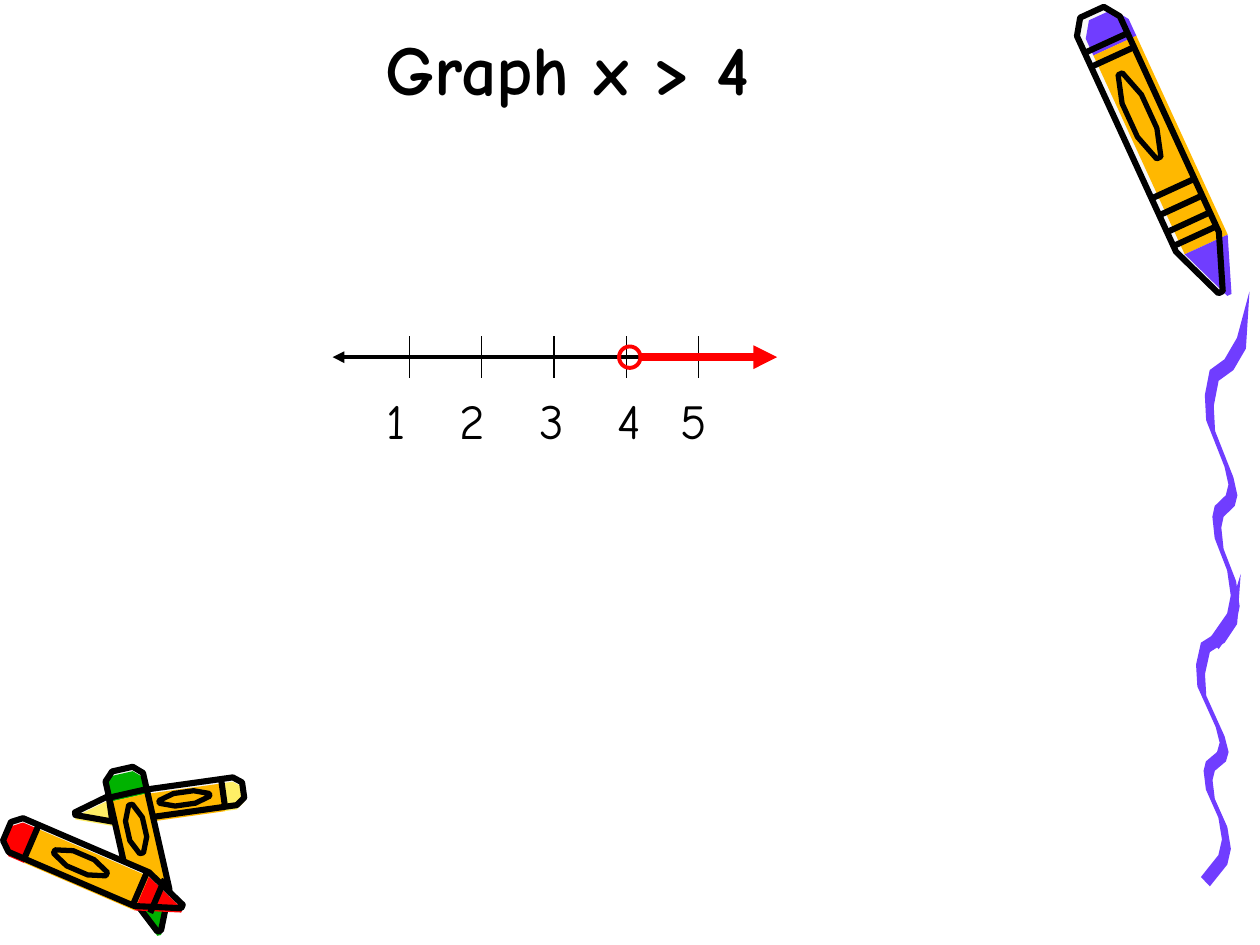
import math

import pptx
import pptx.dml.color
import pptx.enum.shapes
import pptx.enum.text
import pptx.oxml
import pptx.oxml.ns
import pptx.util

Pt = pptx.util.Pt
FONT = "Comic Neue"
BLACK, RED, GREEN = "000000", "FF0000", "00B200"
AMBER, LEMON, VIOLET, PALE = "FFB800", "FFEF66", "703DFF", "F8F8F8"

# Left edge of one wave of the squiggle, as shares of its box's width and height.
WAVE = [(1, 0), (0.72, 0.13), (0.44, 0.19), (0.11, 0.22), (0, 0.29), (0.03, 0.36),
        (0.44, 0.49), (0.53, 0.54), (0.47, 0.57), (0.22, 0.6), (0.17, 0.63),
        (0.22, 0.69), (0.5, 0.78), (0.58, 0.85), (0.5, 0.9), (0.11, 0.97)]


def color(code):
    return pptx.dml.color.RGBColor.from_string(code)


def finish(shape, fill=None, line=None, width=1):
    """Set fill and line; None leaves either one out."""
    shape.shadow.inherit = False
    if fill:
        shape.fill.solid()
        shape.fill.fore_color.rgb = color(fill)
    else:
        shape.fill.background()
    if line:
        shape.line.color.rgb = color(line)
        shape.line.width = Pt(width)
    else:
        shape.line.fill.background()


def outline(slide, points, **style):
    corners = [(Pt(x), Pt(y)) for x, y in points]
    maker = slide.shapes.build_freeform(*corners[0], scale=1.0)
    maker.add_line_segments(corners[1:], close=True)
    finish(maker.convert_to_shape(), **style)


def stroke(slide, x1, y1, x2, y2, code=BLACK, width=0.75, ends=()):
    """Draw a line; ends names the arrowheads: headEnd at the start, tailEnd at the finish."""
    kind = pptx.enum.shapes.MSO_CONNECTOR.STRAIGHT
    line = slide.shapes.add_connector(kind, Pt(x1), Pt(y1), Pt(x2), Pt(y2))
    line.line.color.rgb = color(code)
    line.line.width = Pt(width)
    space = pptx.oxml.ns.nsdecls("a")
    for end in ends:
        arrow = pptx.oxml.parse_xml(f'<a:{end} {space} type="triangle"/>')
        line.line._get_or_add_ln().append(arrow)
    line._element.spPr.append(pptx.oxml.parse_xml(f"<a:effectLst {space}/>"))


def write(slide, text, left, top, width, height, size=28, bold=False, align="LEFT", anchor="TOP"):
    frame = slide.shapes.add_textbox(Pt(left), Pt(top), Pt(width), Pt(height)).text_frame
    frame.word_wrap = True
    frame.vertical_anchor = pptx.enum.text.MSO_ANCHOR[anchor]
    para = frame.paragraphs[0]
    para.alignment = pptx.enum.text.PP_ALIGN[align]
    run = para.add_run()
    run.text = text
    run.font.name = FONT
    run.font.size = Pt(size)
    run.font.bold = bold
    run.font.color.rgb = color(BLACK)


def crayon(slide, start, tip, half, wax, bands, oval, neck=0.77, shift=(0, 2.5)):
    """Draw a crayon from its blunt start to its tip.

    Along its length, 0 is the start and 1 the tip; across, -1 and 1 are its sides.
    bands and neck are places along it, oval is the middle of its label, and
    shift moves the colours out of the black outline, like a loose print.
    """
    (x, y), (end_x, end_y) = start, tip
    run, rise = end_x - x, end_y - y
    length = math.hypot(run, rise)
    side_x, side_y = -rise / length * half, run / length * half

    def place(along, across):
        return x + along * run + across * side_x, y + along * rise + across * side_y

    def ring(stops):
        """Mirror (along, across) stops over the axis into a closed ring of points."""
        mirror = [(along, -across) for along, across in reversed(stops)]
        return [place(*stop) for stop in stops + mirror]

    def paint(code, stops):
        points = [(px + shift[0], py + shift[1]) for px, py in ring(stops)]
        outline(slide, points, fill=code)

    blunt, point = [(0, 0.55), (0.05, 1)], [(neck, 1), (1, 0.1)]
    first = bands[0]
    outline(slide, ring(blunt + point), fill=PALE)
    paint(wax, blunt + [(first, 1)])
    paint(AMBER, [(first, 1), (neck, 1)])
    paint(wax, point)
    outline(slide, ring(blunt + point), line=BLACK, width=3.5)
    for band in bands:
        stroke(slide, *place(band, -1), *place(band, 1), width=3.5)
    label = [(oval - 0.15, 0.1), (oval - 0.06, 0.45), (oval + 0.06, 0.45), (oval + 0.15, 0.1)]
    outline(slide, ring(label), line=BLACK, width=3)


def crayons(slide, left, top):
    """Lay three crayons over each other, the lowest first."""
    pile = [
        ((139, 19.5), (43, 33), 8, LEMON, (0.12, 0.79), 0.35),
        ((70, 7.5), (91, 100), 11, GREEN, (0.15,), 0.37),
        ((4, 43), (104, 86), 10.5, RED, (0.14, 0.76, 0.86), 0.42),
    ]
    for (x1, y1), (x2, y2), *look in pile:
        crayon(slide, (left + x1, top + y1), (left + x2, top + y2), *look)


def marker(slide, left, top):
    bands = (0.11, 0.16, 0.63, 0.69, 0.75, 0.8)
    crayon(slide, (left + 48, top + 7), (left + 121.5, top + 167), 13.5, VIOLET,
           bands, 0.37, neck=0.82, shift=(5, 1.5))


def wave(slide, left, top, width, height):
    """Draw a ribbon between the wave's left edge and the same edge shifted."""
    near, far = WAVE, [(x + 0.2, y + 0.03) for x, y in WAVE[1:]]
    points = [(left + x * width, top + y * height) for x, y in near + far[::-1]]
    outline(slide, points, fill=VIOLET)


def squiggle(slide, left, top):
    wave(slide, left + 5, top + 161.5, 25.5, 178.5)
    wave(slide, left + 10, top, 25.5, 204.5)


def circle(slide, left, top, size):
    kind = pptx.enum.shapes.MSO_SHAPE.OVAL
    shape = slide.shapes.add_shape(kind, Pt(left), Pt(top), Pt(size), Pt(size))
    finish(shape, line=RED, width=2.25)


def graph(slide, left, top, width):
    """Draw the axis from 1 to 5 with an open circle at 4 and the ray to its right."""
    height, first, gap, size = 23.76, left + 43.9, 41.3, 12.24
    axis = top + height / 2
    stroke(slide, left, axis, left + width, axis, width=2.25, ends=("headEnd", "tailEnd"))
    for step, shift in enumerate((23.8, 65.6, 111, 155.6, 191.6)):
        tick = first + step * gap
        stroke(slide, tick, top, tick, top + height)
        write(slide, str(step + 1), left + shift, top + 27.4, 40, 41)
    middle = first + 3 * gap + 2
    circle(slide, middle - size / 2, axis - size / 2, size)
    stroke(slide, middle + size / 2, axis, left + 254, axis, RED, 4.5, ("tailEnd",))


def main():
    deck = pptx.Presentation()
    deck.slide_width, deck.slide_height = Pt(720), Pt(540)
    slide = deck.slides.add_slide(deck.slide_layouts[6])
    crayons(slide, 0, 432)
    squiggle(slide, 678.5, 166.5)
    marker(slide, 576, 0)
    write(slide, "Graph x > 4", 54, 12.24, 540.72, 54, size=40, bold=True,
          align="CENTER", anchor="BOTTOM")
    graph(slide, 190.08, 192.24, 252)
    deck.save("out.pptx")


if __name__ == "__main__":
    main()
